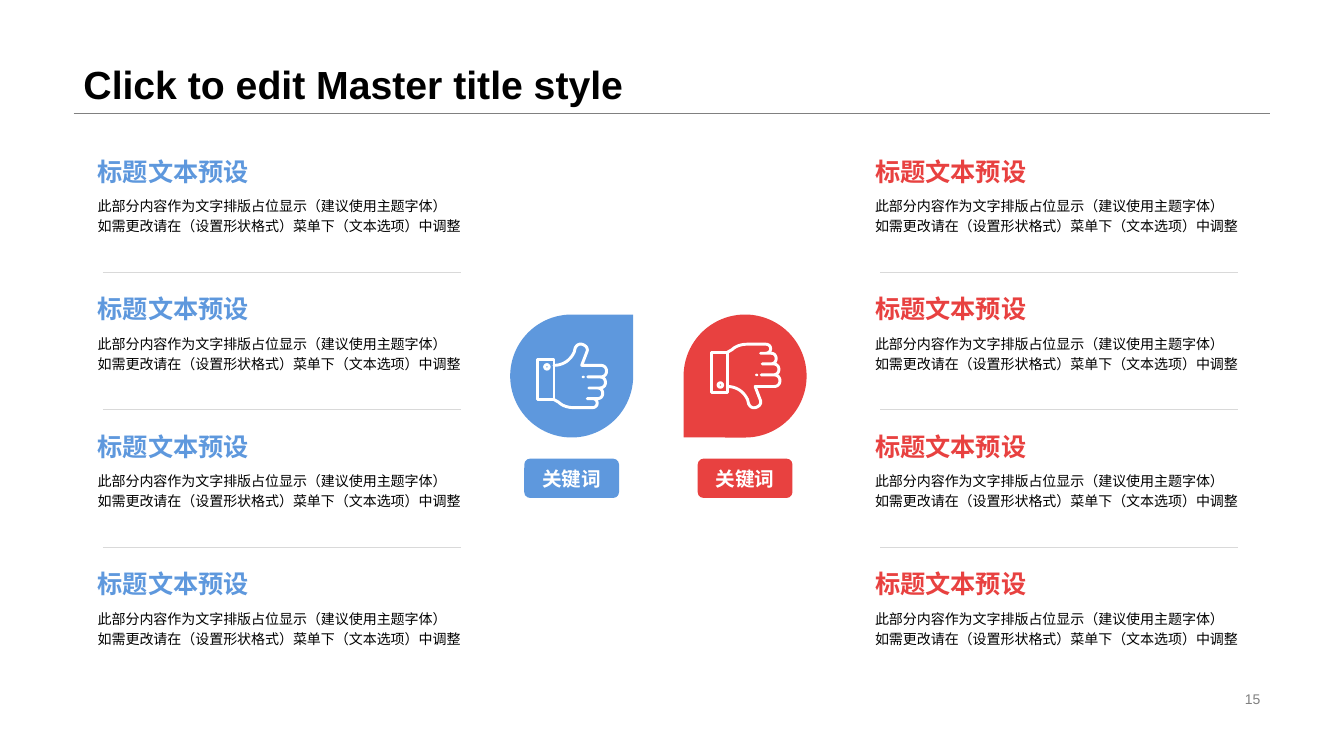
from pptx import Presentation
from pptx.dml.color import RGBColor
from pptx.enum import shapes, text
from pptx.oxml import parse_xml
from pptx.oxml.ns import nsdecls
from pptx.util import Inches, Pt

# Content
TITLE = "Click to edit Master title style"
PAGE_NUMBER = "15"
HEADING = "标题文本预设"
BODY_LINES = ["此部分内容作为文字排版占位显示（建议使用主题字体）",
              "如需更改请在（设置形状格式）菜单下（文本选项）中调整"]
KEYWORD = "关键词"
SIDES = [  # colour, left of the text column, thumb pointing down
    {"color": "5E98DD", "column": 0.87, "down": False},
    {"color": "E84140", "column": 8.58, "down": True},
]
FONT, BLACK, WHITE, GRAY, PALE = "Arial", "000000", "FFFFFF", "808080", "D9D9D9"

# Layout, in inches
ROWS, FIRST_ROW, LAST_ROW = 4, 1.5, 5.59
ROW_STEP = (LAST_ROW - FIRST_ROW) / (ROWS - 1)
COLUMN_WIDTH = 3.88
BADGE_LEFT, BADGE_TOP, BADGE_SIZE, BADGE_STEP = 5.06, 3.12, 1.22, 1.72

# Thumb icon: centre lines on a grid of 200 units to the inch;
# two numbers make a straight segment, six make a Bézier curve
UNIT, ICON_HEIGHT, ICON_STROKE = 1 / 200, 132, 2.1
CUFF = [(3, 33), (35, 33), (35, 113), (3, 113), (3, 33)]
HAND = [
    (35, 45), (54, 45, 68, 34, 75, 19), (77, 11),
    (80, 4, 86, 1, 93, 4), (100, 7, 103, 13, 100, 19), (90, 45),
    (128, 45), (143, 45, 143, 68, 128, 68), (102, 68),
    (126, 68), (141, 68, 141, 90, 126, 90), (104, 90),
    (122, 90), (135, 90, 135, 111, 122, 111), (101, 111),
    (111, 111), (124, 111, 124, 129, 111, 129),
    (76, 129), (64, 129, 52, 126, 44, 118), (35, 113),
]
BUTTON = (21, 48, 4.5, 4.5)  # centre x, centre y, radii
DOT = (93, 68, 3, 2.5)

presentation = Presentation()
presentation.slide_width, presentation.slide_height = Inches(13.33), Inches(7.5)
slide = presentation.slides.add_slide(presentation.slide_layouts[6])


def rgb(color):
    return RGBColor.from_string(color)


def style(shape, fill=None, line=None, width=ICON_STROKE):
    shape.shadow.inherit = False
    if fill:
        shape.fill.solid()
        shape.fill.fore_color.rgb = rgb(fill)
    else:
        shape.fill.background()
    if line:
        shape.line.color.rgb = rgb(line)
        shape.line.width = Pt(width)
    else:
        shape.line.fill.background()


def write(shape, words, size, color, bold=False, align=text.PP_ALIGN.LEFT,
          anchor=text.MSO_ANCHOR.TOP, spacing=None, wrap=True):
    frame = shape.text_frame
    frame.text = words
    frame.word_wrap, frame.vertical_anchor = wrap, anchor
    paragraph = frame.paragraphs[0]
    paragraph.alignment, paragraph.line_spacing = align, spacing
    for run in paragraph.runs:
        run.font.name, run.font.size, run.font.bold = FONT, Pt(size), bold
        run.font.color.rgb = rgb(color)


def add_text(left, top, width, height, words, size, color, **options):
    box = slide.shapes.add_textbox(*map(Inches, (left, top, width, height)))
    write(box, words, size, color, **options)


def add_shape(preset, left, top, width, height):
    return slide.shapes.add_shape(preset, *map(Inches, (left, top, width, height)))


def add_rule(left, right, y, color):
    rule = slide.shapes.add_connector(
        shapes.MSO_CONNECTOR.STRAIGHT, *map(Inches, (left, y, right, y)))
    rule.line.color.rgb = rgb(color)
    rule.line.width = Pt(0.25)
    rule._element.spPr.append(parse_xml(f"<a:effectLst {nsdecls('a')}/>"))


def flatten(segments, steps=10):
    points = [segments[0]]
    for segment in segments[1:]:
        if len(segment) == 2:
            points.append(segment)
            continue
        x0, y0 = points[-1]
        x1, y1, x2, y2, x3, y3 = segment
        for step in range(1, steps + 1):
            t = step / steps
            a, b, c, d = (1 - t) ** 3, 3 * t * (1 - t) ** 2, 3 * t * t * (1 - t), t ** 3
            points.append((a * x0 + b * x1 + c * x2 + d * x3,
                           a * y0 + b * y1 + c * y2 + d * y3))
    return points


def add_thumb(left, top, down):
    def place(x, y):
        return left + x * UNIT, top + (ICON_HEIGHT - y if down else y) * UNIT

    for outline in (CUFF, HAND):
        points = [tuple(map(Inches, place(x, y))) for x, y in flatten(outline)]
        builder = slide.shapes.build_freeform(*points[0])
        builder.add_line_segments(points[1:], close=outline is CUFF)
        stroke = builder.convert_to_shape()
        style(stroke, line=WHITE)
        line = stroke.line._get_or_add_ln()
        line.set("cap", "rnd")
        line.append(parse_xml(f"<a:round {nsdecls('a')}/>"))
    for (x, y, rx, ry), fill, line in ((BUTTON, None, WHITE), (DOT, WHITE, None)):
        cx, cy = place(x, y)
        oval = add_shape(shapes.MSO_SHAPE.OVAL, cx - rx * UNIT, cy - ry * UNIT,
                         2 * rx * UNIT, 2 * ry * UNIT)
        style(oval, fill, line)


# Title and page number
add_rule(0.73, 12.6, 1.12, GRAY)
add_text(0.73, 0, 11.87, 1.12, TITLE, 28, BLACK, bold=True,
         anchor=text.MSO_ANCHOR.BOTTOM, spacing=0.9)
add_text(9.42, 6.82, 3.18, 0.23, PAGE_NUMBER, 10, GRAY,
         align=text.PP_ALIGN.RIGHT, anchor=text.MSO_ANCHOR.MIDDLE)

for index, side in enumerate(SIDES):
    # Badge with thumb and keyword
    left = BADGE_LEFT + index * BADGE_STEP
    badge = add_shape(shapes.MSO_SHAPE.TEAR, left, BADGE_TOP, BADGE_SIZE, BADGE_SIZE)
    badge.rotation = 180 if side["down"] else 0
    style(badge, side["color"])
    add_thumb(left + 0.26, BADGE_TOP + 0.28, side["down"])
    label = add_shape(shapes.MSO_SHAPE.ROUNDED_RECTANGLE, left + 0.14, 4.55, 0.94, 0.39)
    label.adjustments[0] = 0.15
    style(label, side["color"])
    write(label, KEYWORD, 14, WHITE, bold=True, align=text.PP_ALIGN.CENTER,
          anchor=text.MSO_ANCHOR.MIDDLE, wrap=False)

    # Text column with rules between the rows
    column = side["column"]
    for row in range(ROWS):
        top = FIRST_ROW + row * ROW_STEP
        add_text(column, top, COLUMN_WIDTH, 0.38, HEADING, 18, side["color"],
                 bold=True, wrap=False)
        add_text(column, top + 0.38, COLUMN_WIDTH, 0.66, "\v".join(BODY_LINES),
                 10, BLACK, spacing=1.2)
        if row < ROWS - 1:
            add_rule(column + 0.15, column + 3.7, top + 1.2, PALE)

presentation.save("out.pptx")
